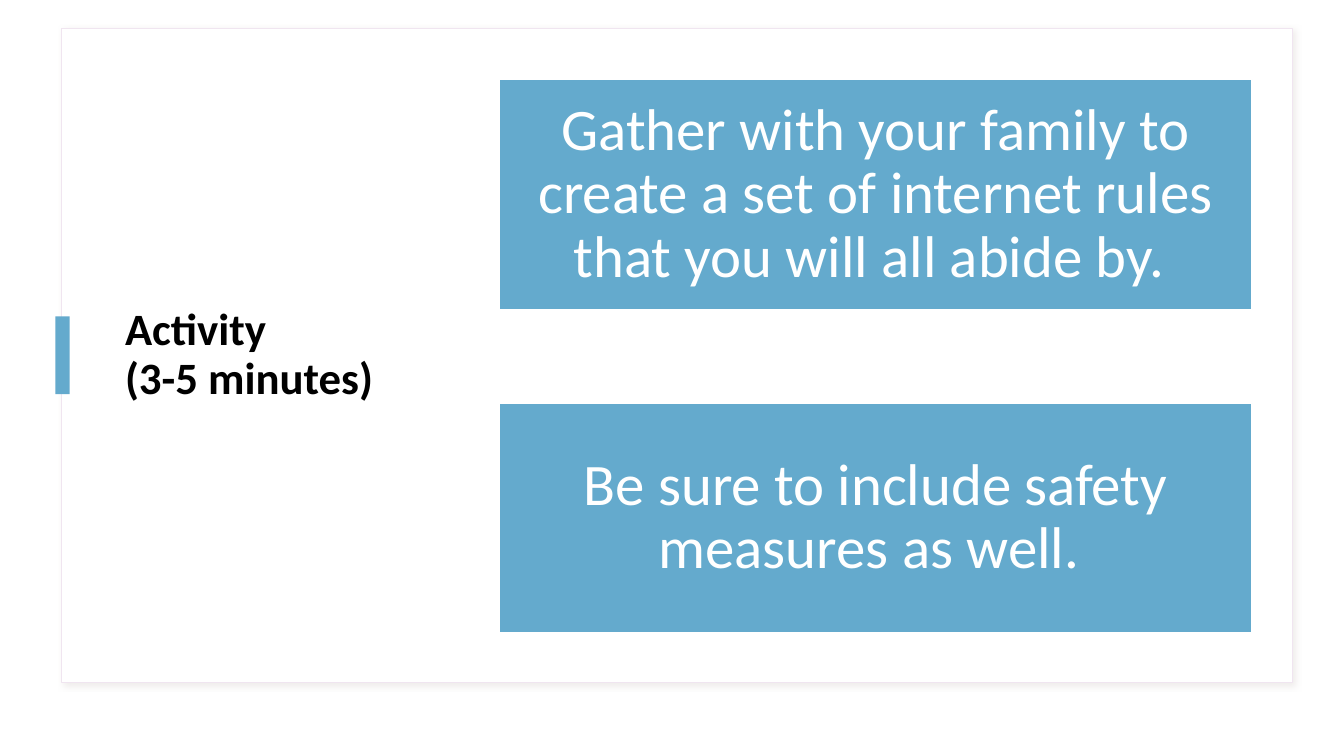
import pptx
import pptx.util
import pptx.oxml
import pptx.dml.color
import pptx.enum.shapes
import pptx.enum.text
from pptx.util import Inches

THEME = {
    "font": "Calibri",
    "blue": "64AACD",
    "white": "FFFFFF",
    "black": "000000",
    "edge": "F0E5F0",
    "shade": "CAC0BC",
    "title": 32,
    "card": 42,
}


def add_box(left, top, width, height, fill, line=None):
    box = slide.shapes.add_shape(
        pptx.enum.shapes.MSO_SHAPE.RECTANGLE,
        Inches(left), Inches(top), Inches(width), Inches(height))
    box.shadow.inherit = False
    box.fill.solid()
    box.fill.fore_color.rgb = pptx.dml.color.RGBColor.from_string(THEME[fill])
    if line:
        box.line.color.rgb = pptx.dml.color.RGBColor.from_string(THEME[line])
        box.line.width = pptx.util.Pt(1)
    else:
        box.line.fill.background()
    return box


def set_text(shape, text, role, color, align, bold):
    frame = shape.text_frame
    frame.text = text
    frame.word_wrap = True
    frame.auto_size = pptx.enum.text.MSO_AUTO_SIZE.NONE
    frame.vertical_anchor = pptx.enum.text.MSO_ANCHOR.MIDDLE
    para = frame.paragraphs[0]
    para.alignment = align
    para.line_spacing = 0.9
    for run in para.runs:
        run.font.name = THEME["font"]
        run.font.size = pptx.util.Pt(THEME[role])
        run.font.bold = bold
        run.font.color.rgb = pptx.dml.color.RGBColor.from_string(THEME[color])


deck = pptx.Presentation()
deck.slide_width = Inches(13.33)
deck.slide_height = Inches(7.5)
slide = deck.slides.add_slide(deck.slide_layouts[5])

# Framed panel with a soft shadow
panel = add_box(0.61, 0.28, 12.21, 6.49, "white", "edge")
effects = panel.element.spPr.find(pptx.oxml.ns.qn("a:effectLst"))
effects.append(pptx.oxml.parse_xml(
    f'<a:outerShdw {pptx.oxml.ns.nsdecls("a")} blurRad="{pptx.util.Pt(4)}"'
    f' dist="{pptx.util.Pt(3)}" dir="2700000" algn="tl" rotWithShape="0">'
    f'<a:srgbClr val="{THEME["shade"]}"><a:alpha val="30000"/></a:srgbClr>'
    '</a:outerShdw>'))

# Title, raised above the panel
title = slide.shapes.title
title.left, title.top = Inches(1.14), Inches(0.55)
title.width, title.height = Inches(3.27), Inches(5.95)
set_text(title, "Activity\v(3-5 minutes)", "title", "black",
         pptx.enum.text.PP_ALIGN.LEFT, True)
title.element.getparent().append(title.element)

add_box(0.55, 3.14, 0.14, 0.77, "blue")

# Instruction cards
cards = [
    "Gather with your family to create a set of internet rules "
    "that you will all abide by. ",
    "Be sure to include safety measures as well. ",
]
for row, text in enumerate(cards):
    card = add_box(4.95, 0.79 + row * 3.21, 7.47, 2.28, "blue", "white")
    frame = card.text_frame
    frame.margin_left = frame.margin_right = Inches(0.03)
    frame.margin_top = frame.margin_bottom = Inches(0.03)
    set_text(card, text, "card", "white",
             pptx.enum.text.PP_ALIGN.CENTER, False)

deck.save("out.pptx")
